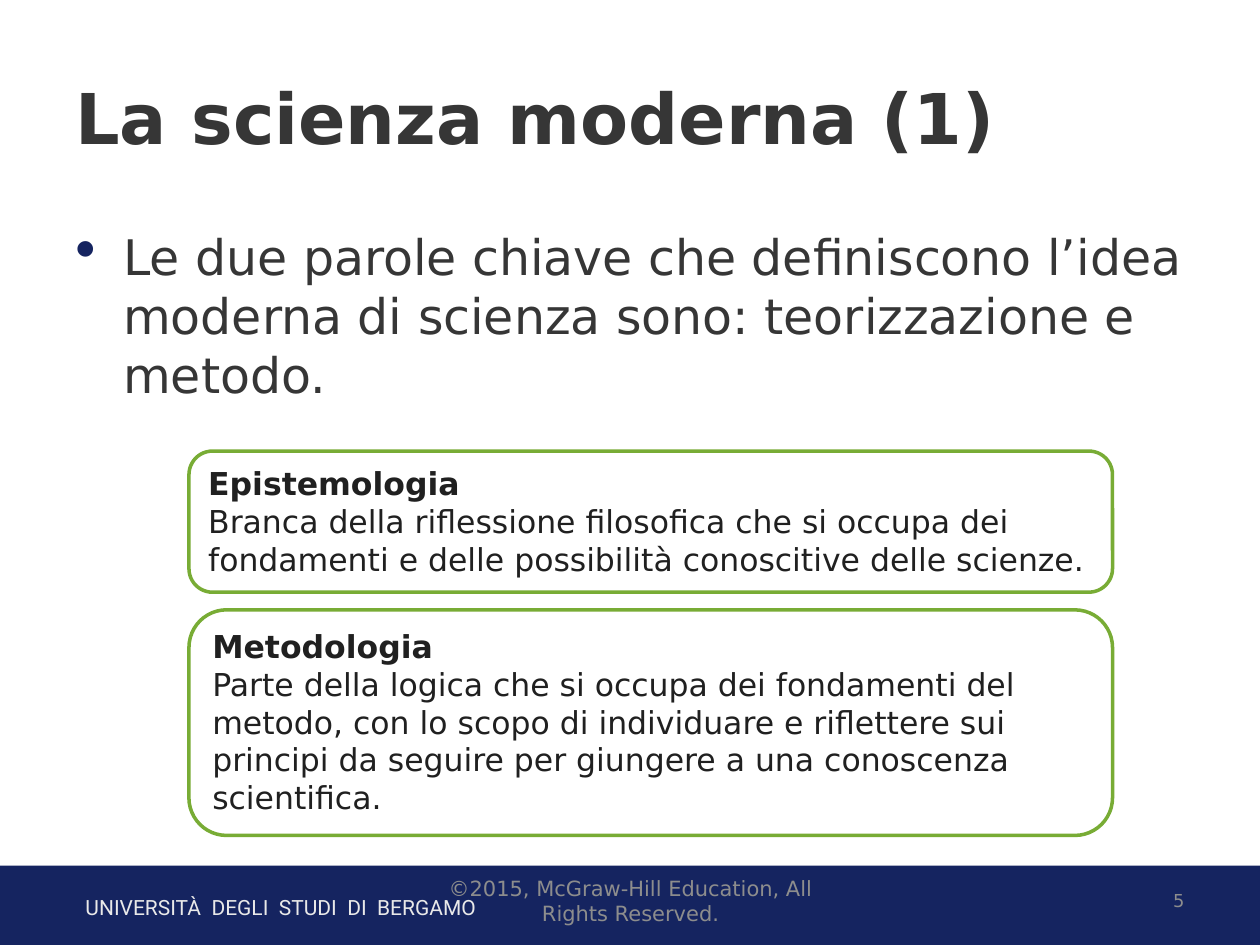
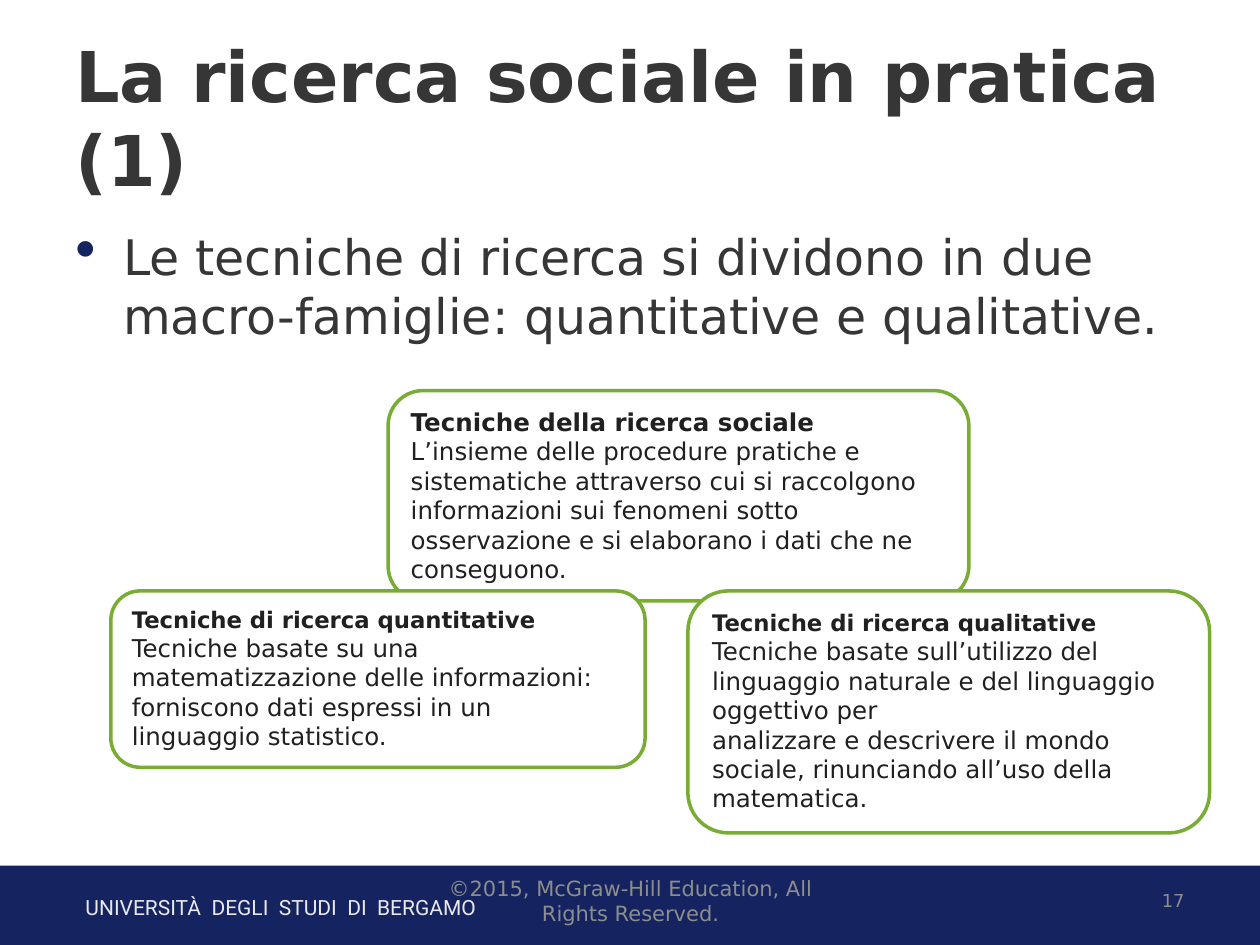
import pptx
import pptx.dml.color
import pptx.enum.shapes
import pptx.enum.text
import pptx.oxml.ns
import pptx.util
from lxml import etree

Inches = pptx.util.Inches
Pt = pptx.util.Pt
ANCHOR = pptx.enum.text.MSO_ANCHOR
ALIGN = pptx.enum.text.PP_ALIGN
SHAPE = pptx.enum.shapes.MSO_SHAPE

COLORS = {
    "navy": "152460",
    "green": "78AC35",
    "paper": "FFFFFF",
    "heading": "363636",
    "definition": "202020",
    "footer": "8D8D8D",
    "university": "E9E9E9",
}
MAIN_FONT = "DejaVu Sans"
UNIVERSITY_FONT = "Roboto"


def rgb(name):
    return pptx.dml.color.RGBColor.from_string(COLORS[name])


class Deck:
    def __init__(self):
        self.prs = pptx.Presentation()
        self.prs.slide_width = Inches(10)
        self.prs.slide_height = Inches(7.5)
        self.slide = None

    def new_slide(self, title, statement, number):
        """Start a slide with its band, footers, title and bulleted statement."""
        self.slide = self.prs.slides.add_slide(self.prs.slide_layouts[6])
        self.band()
        self.text((0.58, 7.05, 5.82, 0.3), "UNIVERSITÀ  DEGLI  STUDI  DI  BERGAMO",
                  12, "university", font=UNIVERSITY_FONT, anchor=ANCHOR.TOP)
        self.text((0.5, 0.3, 9, 1.25), title, 40, "heading", bold=True)
        self.statement(statement)
        self.text((7.17, 6.95, 2.33, 0.4), str(number), 10.2, "footer", align=ALIGN.RIGHT)

    def copyright(self):
        self.text((3.42, 6.95, 3.17, 0.4), "©2015, McGraw-Hill Education, All Rights Reserved.",
                  12, "footer", align=ALIGN.CENTER)

    def run(self, paragraph, words, size, color, bold=False, font=MAIN_FONT):
        run = paragraph.add_run()
        run.text = words
        run.font.name = font
        run.font.size = Pt(size)
        run.font.bold = bold
        run.font.color.rgb = rgb(color)

    def text(self, place, words, size, color, bold=False, font=MAIN_FONT,
             align=ALIGN.LEFT, anchor=ANCHOR.MIDDLE):
        frame = self.slide.shapes.add_textbox(*map(Inches, place)).text_frame
        frame.word_wrap = True
        frame.vertical_anchor = anchor
        paragraph = frame.paragraphs[0]
        paragraph.alignment = align
        self.run(paragraph, words, size, color, bold, font)
        return paragraph

    def statement(self, words):
        paragraph = self.text((0.5, 1.75, 9, 4.95), words, 28, "heading", anchor=ANCHOR.TOP)
        properties = paragraph._p.get_or_add_pPr()
        properties.set("marL", str(Inches(0.38)))
        properties.set("indent", str(-Inches(0.38)))
        qn = pptx.oxml.ns.qn
        bullet_color = etree.SubElement(properties, qn("a:buClr"))
        etree.SubElement(bullet_color, qn("a:srgbClr"), val=COLORS["navy"])
        etree.SubElement(properties, qn("a:buSzPct"), val="122000")
        etree.SubElement(properties, qn("a:buChar"), char="•")

    def shape(self, kind, place, fill):
        shape = self.slide.shapes.add_shape(kind, *map(Inches, place))
        shape.shadow.inherit = False
        shape.fill.solid()
        shape.fill.fore_color.rgb = rgb(fill)
        return shape

    def band(self):
        self.shape(SHAPE.RECTANGLE, (0, 6.87, 10, 0.68), "navy").line.fill.background()

    def definition(self, place, term, meanings, size, term_size=None):
        """Rounded box with a bold term above the paragraphs that explain it."""
        box = self.shape(SHAPE.ROUNDED_RECTANGLE, place, "paper")
        box.line.color.rgb = rgb("green")
        box.line.width = Pt(2)
        frame = box.text_frame
        frame.word_wrap = True
        frame.vertical_anchor = ANCHOR.TOP
        heading = frame.paragraphs[0]
        heading.alignment = ALIGN.LEFT
        self.run(heading, term, term_size or size, "definition", bold=True)
        for meaning in meanings:
            paragraph = frame.add_paragraph()
            paragraph.alignment = ALIGN.LEFT
            self.run(paragraph, meaning, size, "definition")


def main():
    deck = Deck()

    deck.new_slide(
        "La scienza moderna (1)",
        "Le due parole chiave che definiscono l’idea moderna di scienza sono: "
        "teorizzazione e metodo.", 5)
    deck.definition(
        (1.5, 3.58, 7.33, 1.12), "Epistemologia",
        ["Branca della riflessione filosofica che si occupa dei fondamenti e delle "
         "possibilità conoscitive delle scienze."], 18)
    deck.definition(
        (1.5, 4.84, 7.33, 1.79), "Metodologia",
        ["Parte della logica che si occupa dei fondamenti del metodo, con lo scopo di "
         "individuare e riflettere sui principi da seguire per giungere a una "
         "conoscenza scientifica."], 18)
    deck.copyright()

    deck.new_slide(
        "La ricerca sociale in pratica (1)",
        "Le tecniche di ricerca si dividono in due macro-famiglie: quantitative e "
        "qualitative.", 17)
    deck.definition(
        (3.08, 3.1, 4.61, 1.67), "Tecniche della ricerca sociale",
        ["L’insieme delle procedure pratiche e sistematiche attraverso cui si raccolgono "
         "informazioni sui fenomeni sotto osservazione e si elaborano i dati che ne "
         "conseguono."], 14)
    deck.definition(
        (0.88, 4.69, 4.24, 1.4), "Tecniche di ricerca quantitative",
        ["Tecniche basate su una matematizzazione delle informazioni: forniscono dati "
         "espressi in un linguaggio statistico."], 14, term_size=13)
    deck.definition(
        (5.46, 4.69, 4.14, 1.92), "Tecniche di ricerca qualitative",
        ["Tecniche basate sull’utilizzo del linguaggio naturale e del linguaggio "
         "oggettivo per",
         "analizzare e descrivere il mondo sociale, rinunciando all’uso della "
         "matematica."], 14, term_size=13)
    deck.copyright()

    deck.prs.save("out.pptx")


if __name__ == "__main__":
    main()
